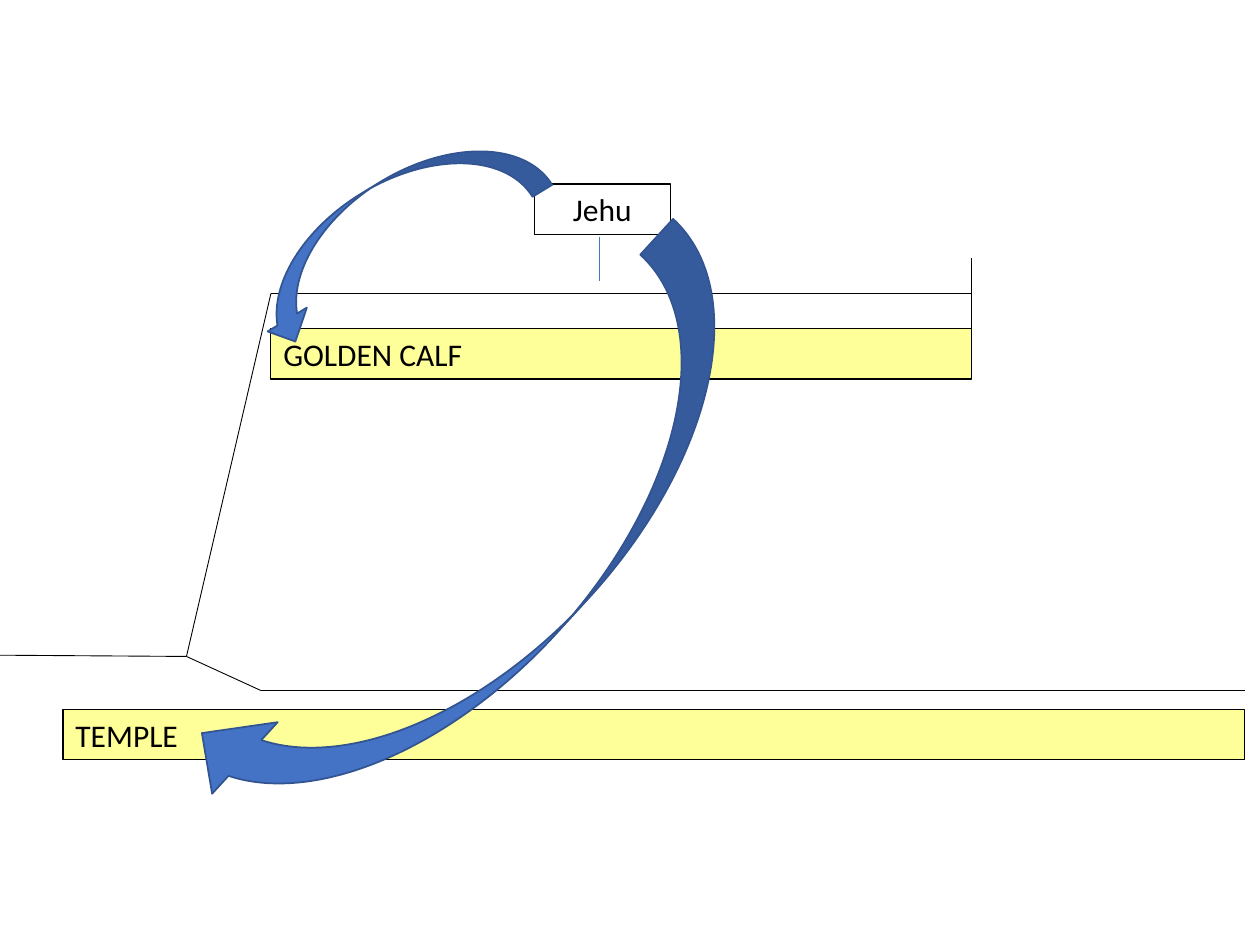
from lxml import etree
from pptx import Presentation
from pptx.dml.color import RGBColor
from pptx.enum import shapes, text
from pptx.oxml.ns import qn
from pptx.util import Inches, Pt

COLOURS = {"ink": "000000", "band": "FFFF99", "arrow": "4472C4", "edge": "325491"}

# Corners shared by the timeline
FORK = (1.48, 5.21)
NORTH_START, NORTH_END = (2.15, 2.33), (7.71, 2.33)
SOUTH_START, SOUTH_END = (2.07, 5.48), (9.88, 5.48)

# from, to, colour
TIMELINE = [
    (FORK, NORTH_START, "ink"),
    (FORK, SOUTH_START, "ink"),
    (NORTH_START, NORTH_END, "ink"),
    (SOUTH_START, SOUTH_END, "ink"),
    ((0, 5.2), FORK, "ink"),
    ((7.71, 2.61), (7.71, 2.05), "ink"),
]
JEHU_MARK = [((4.76, 1.88), (4.76, 2.23), "arrow")]

# wording, left, top, width, fill, alignment
LABEL_HEIGHT = 0.4
WORSHIP = [
    ("TEMPLE", 0.5, 5.63, 9.38, "band", text.PP_ALIGN.LEFT),
    ("GOLDEN CALF", 2.15, 2.61, 5.56, "band", text.PP_ALIGN.LEFT),
]
KING = [("Jehu", 4.24, 1.46, 1.08, None, text.PP_ALIGN.CENTER)]

# preset, (left, top, width, height), rotation
ARROWS = [
    (shapes.MSO_SHAPE.CURVED_RIGHT_ARROW, (2.73, 0.54, 0.73, 2.57), 58.6),
    (shapes.MSO_SHAPE.CURVED_LEFT_ARROW, (3.14, 1.48, 1.54, 5.92), 42.5),
]


def rgb(name):
    return RGBColor.from_string(COLOURS[name])


def add_outlined(slide, preset, box, fill, edge, width):
    shape = slide.shapes.add_shape(preset, *map(Inches, box))
    shape.shadow.inherit = False
    if fill:
        shape.fill.solid()
        shape.fill.fore_color.rgb = rgb(fill)
    else:
        shape.fill.background()
    shape.line.color.rgb = rgb(edge)
    shape.line.width = Pt(width)
    return shape


def add_lines(slide, lines):
    for start, end, colour in lines:
        line = slide.shapes.add_connector(
            shapes.MSO_CONNECTOR.STRAIGHT, *map(Inches, start + end))
        line.line.color.rgb = rgb(colour)
        line.line.width = Pt(0.5)
        etree.SubElement(line._element.spPr, qn("a:effectLst"))


def add_labels(slide, labels):
    for wording, left, top, width, fill, alignment in labels:
        label = add_outlined(slide, shapes.MSO_SHAPE.RECTANGLE,
                             (left, top, width, LABEL_HEIGHT), fill, "ink", 0.75)
        frame = label.text_frame
        frame_format = {"word_wrap": True,
                        "vertical_anchor": text.MSO_ANCHOR.TOP,
                        "auto_size": text.MSO_AUTO_SIZE.SHAPE_TO_FIT_TEXT}
        for key, value in frame_format.items():
            setattr(frame, key, value)
        paragraph = frame.paragraphs[0]
        paragraph.alignment = alignment
        run = paragraph.add_run()
        run.text = wording
        for key, value in {"name": "Calibri", "size": Pt(18)}.items():
            setattr(run.font, key, value)
        run.font.color.rgb = rgb("ink")


def main():
    deck = Presentation()
    deck.slide_width, deck.slide_height = Inches(10), Inches(7.5)
    slide = deck.slides.add_slide(deck.slide_layouts[6])

    # Divided kingdom and its places of worship
    add_lines(slide, TIMELINE)
    add_labels(slide, WORSHIP)

    # Jehu and his mark on the northern line
    add_lines(slide, JEHU_MARK)
    add_labels(slide, KING)

    # Arrows from Jehu to each place of worship
    for preset, box, rotation in ARROWS:
        arrow = add_outlined(slide, preset, box, "arrow", "edge", 1)
        arrow.rotation = rotation

    deck.save("out.pptx")


if __name__ == "__main__":
    main()
